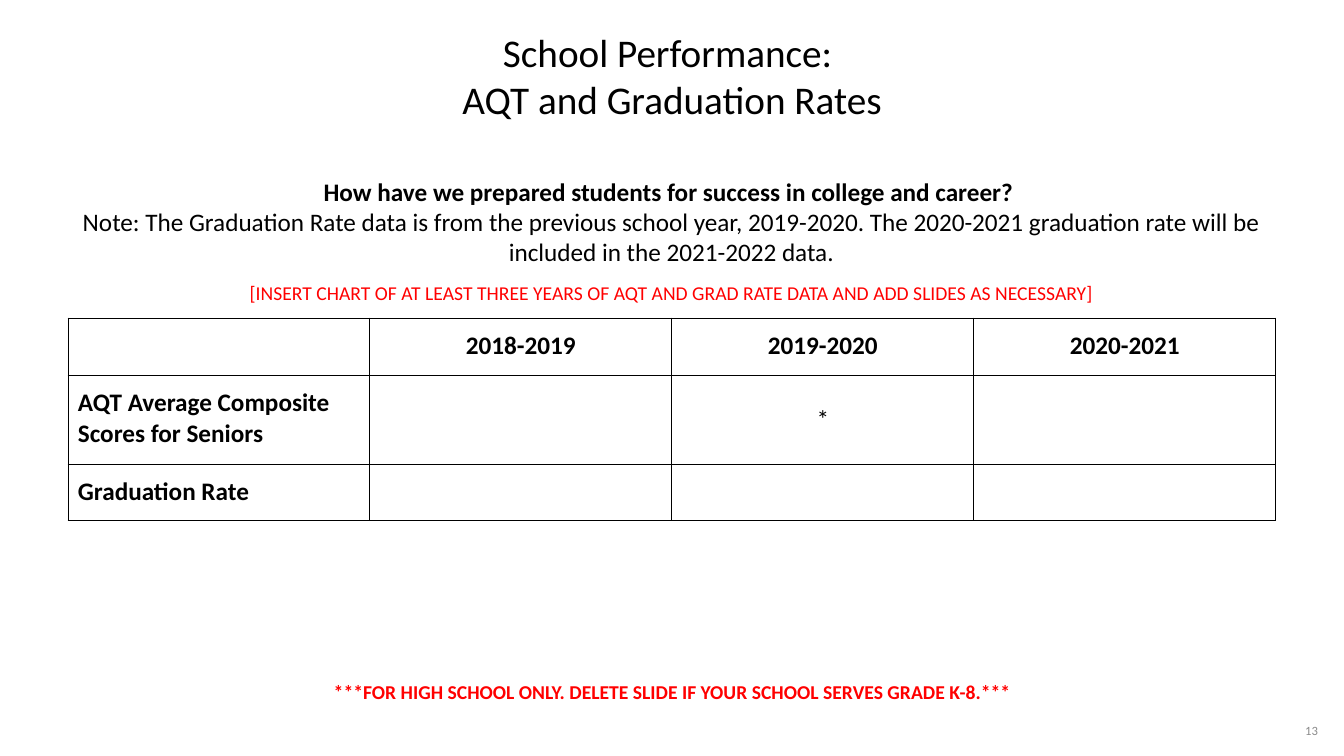
import dataclasses

import pptx
import pptx.dml.color
import pptx.enum.text
import pptx.oxml
import pptx.oxml.ns
import pptx.util

ALIGN = pptx.enum.text.PP_ALIGN
ANCHOR = pptx.enum.text.MSO_ANCHOR


@dataclasses.dataclass(frozen=True)
class Theme:
    font: str = "Calibri"
    ink: str = "000000"
    alert: str = "FF0000"
    muted: str = "8A8A8A"
    title: int = 28
    body: int = 18
    note: int = 14
    small: int = 9
    border: float = 0.75


class SlideBuilder:
    EMU_PER_PX = 914400 / 100.8

    def __init__(self, prs, theme):
        self.theme = theme
        self.s = prs.slides.add_slide(prs.slide_layouts[5])

    @classmethod
    def px(cls, n):
        return pptx.util.Emu(round(n * cls.EMU_PER_PX))

    def add_run(self, p, text, size, color, bold=False):
        r = p.add_run()
        r.text = text
        r.font.name = self.theme.font
        r.font.size = pptx.util.Pt(size)
        r.font.bold = bold
        r.font.color.rgb = pptx.dml.color.RGBColor.from_string(color)

    def fill_frame(self, tf, lines, align, anchor, inset_y):
        """Each line is (text, size, color, bold, space before in points)."""
        tf.word_wrap = True
        tf.auto_size = pptx.enum.text.MSO_AUTO_SIZE.NONE
        tf.vertical_anchor = anchor
        tf.margin_left = tf.margin_right = self.px(10)
        tf.margin_top = tf.margin_bottom = self.px(inset_y)
        for i, (text, size, color, bold, before) in enumerate(lines):
            p = tf.add_paragraph() if i else tf.paragraphs[0]
            p.alignment = align
            p.space_before = pptx.util.Pt(before)
            self.add_run(p, text, size, color, bold)

    def title(self, box, lines):
        sp = self.s.shapes.title
        sp.left, sp.top, sp.width, sp.height = map(self.px, box)
        t = self.theme
        self.fill_frame(sp.text_frame, [(x, t.title, t.ink, False, 0) for x in lines],
                        ALIGN.CENTER, ANCHOR.MIDDLE, 10)

    def text(self, box, lines, align=ALIGN.CENTER, anchor=ANCHOR.TOP, inset_y=10):
        sp = self.s.shapes.add_textbox(*map(self.px, box))
        self.fill_frame(sp.text_frame, lines, align, anchor, inset_y)

    def border_cell(self, cell):
        tc_pr = cell._tc.get_or_add_tcPr()
        ns = pptx.oxml.ns.nsdecls("a")
        width = pptx.util.Pt(self.theme.border)
        for i, side in enumerate(("lnL", "lnR", "lnT", "lnB")):
            tc_pr.insert(i, pptx.oxml.parse_xml(
                f'<a:{side} {ns} w="{width}"><a:solidFill>'
                f'<a:srgbClr val="{self.theme.ink}"/></a:solidFill></a:{side}>'))

    def table(self, left, top, col_width, row_heights, rows):
        t = self.theme
        n_cols = len(rows[0])
        box = (left, top, col_width * n_cols, sum(row_heights))
        tbl = self.s.shapes.add_table(len(rows), n_cols, *map(self.px, box)).table
        tbl.first_row = tbl.horz_banding = False
        for col in tbl.columns:
            col.width = self.px(col_width)
        for i, (height, values) in enumerate(zip(row_heights, rows)):
            tbl.rows[i].height = self.px(height)
            for j, value in enumerate(values):
                cell = tbl.cell(i, j)
                cell.fill.background()
                self.border_cell(cell)
                if not value:
                    continue
                # Headings are bold; values sit in the middle of the cell
                heading = i == 0 or j == 0
                cell.margin_left = cell.margin_right = self.px(10)
                cell.margin_top = cell.margin_bottom = self.px(13)
                cell.vertical_anchor = ANCHOR.TOP if heading else ANCHOR.MIDDLE
                p = cell.text_frame.paragraphs[0]
                p.alignment = ALIGN.CENTER if j else ALIGN.LEFT
                self.add_run(p, value, t.body, t.ink, heading)


def main():
    prs = pptx.Presentation()
    prs.slide_width = SlideBuilder.px(1344)
    prs.slide_height = SlideBuilder.px(756)
    t = Theme()
    slide = SlideBuilder(prs, t)

    # Title
    slide.title((0, -2, 1344, 154), ["School Performance: ", "AQT and Graduation Rates"])

    # Results table
    slide.table(68, 318, 302, [57, 89, 57], [
        ["", "2018-2019", "2019-2020", "2020-2021"],
        ["AQT Average Composite Scores for Seniors", "", "*", ""],
        ["Graduation Rate", "", "", ""],
    ])

    # Guiding question and notes
    slide.text((27, 166, 1289, 142), [
        ("How have we prepared students for success in college and career? ",
         t.body, t.ink, True, 0),
        ("Note: The Graduation Rate data is from the previous school year, 2019-2020. "
         "The 2020-2021 graduation rate will be included in the 2021-2022 data.",
         t.body, t.ink, False, 0),
        ("[INSERT CHART OF AT LEAST THREE YEARS OF AQT AND GRAD RATE DATA "
         "AND ADD SLIDES AS NECESSARY]", t.note, t.alert, False, 10),
    ])

    # High school reminder
    slide.text((112, 670, 1121, 44), [
        ("***FOR HIGH SCHOOL ONLY. DELETE SLIDE IF YOUR SCHOOL SERVES GRADE K-8.***",
         t.note, t.alert, True, 0),
    ])

    # Slide number
    slide.text((1000, 706, 328, 50), [("13", t.small, t.muted, False, 0)],
               ALIGN.RIGHT, ANCHOR.MIDDLE, 5)

    prs.save("out.pptx")


if __name__ == "__main__":
    main()
